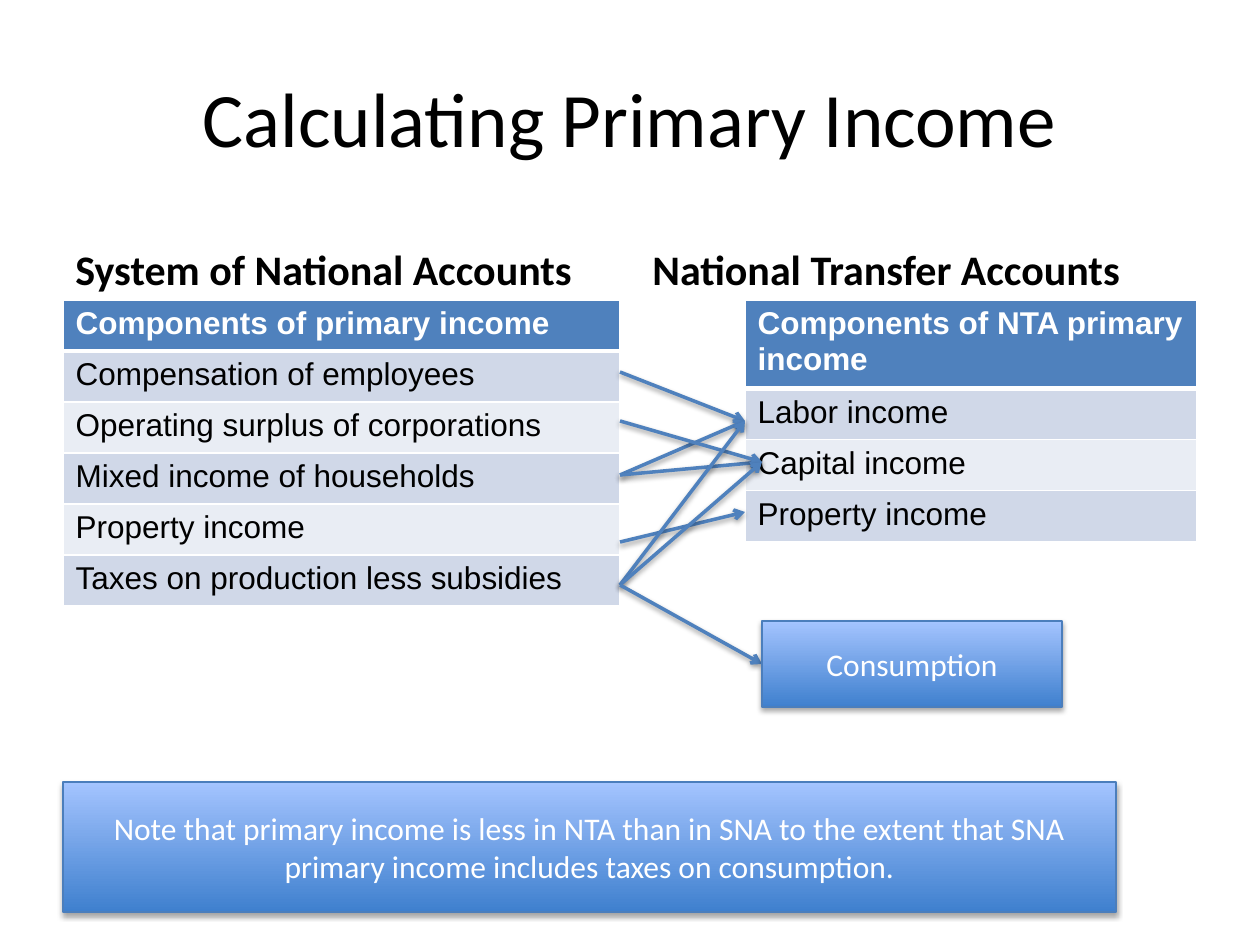
from lxml.etree import SubElement
from pptx import Presentation
from pptx.dml.color import RGBColor
from pptx.enum.shapes import MSO_CONNECTOR as Connector, MSO_SHAPE as Shape
from pptx.enum.text import MSO_ANCHOR as Anchor, PP_ALIGN as Align
from pptx.oxml.ns import qn
from pptx.util import Emu, Pt

EMU_PER_PX = 914400 / 126
BLUE, WHITE, BLACK = "4F81BD", "FFFFFF", "000000"
BANDS = ("D0D8E8", "E9EDF4")
ROW_HEIGHT = 51


def px(length):
    return Emu(round(length * EMU_PER_PX))


def color(hex_string):
    return RGBColor.from_string(hex_string)


def style(paragraph, size, hex_color, font="Calibri", bold=False, align=None):
    paragraph.font.name = font
    paragraph.font.size = Pt(size)
    paragraph.font.bold = bold
    paragraph.font.color.rgb = color(hex_color)
    paragraph.alignment = align


def add_shadow(shape, distance, opacity):
    effects = SubElement(shape._element.spPr, qn("a:effectLst"))
    shadow = SubElement(effects, qn("a:outerShdw"), blurRad="40000", dist=str(distance),
                        dir="5400000", rotWithShape="0")
    shade = SubElement(shadow, qn("a:srgbClr"), val=BLACK)
    SubElement(shade, qn("a:alpha"), val=str(opacity * 1000))


def add_text(slide, box, text, size, anchor, bold=False, align=None):
    frame = slide.shapes.add_textbox(*map(px, box)).text_frame
    frame.word_wrap = True
    frame.vertical_anchor = anchor
    frame.text = text
    style(frame.paragraphs[0], size, BLACK, bold=bold, align=align)


def add_borders(cell, top, bottom):
    properties = cell._tc.get_or_add_tcPr()
    for side, width in (("L", 1), ("R", 1), ("T", top), ("B", bottom)):
        line = SubElement(properties, qn(f"a:ln{side}"), w=str(Pt(width)))
        fill = SubElement(line, qn("a:solidFill"))
        SubElement(fill, qn("a:srgbClr"), val=WHITE)


def add_components(slide, left, top, width, header_height, labels):
    """One-column table: a header, then banded rows."""
    height = header_height + ROW_HEIGHT * (len(labels) - 1)
    table = slide.shapes.add_table(len(labels), 1, *map(px, (left, top, width, height))).table
    for index, label in enumerate(labels):
        header = index == 0
        table.rows[index].height = px(header_height if header else ROW_HEIGHT)
        cell = table.cell(index, 0)
        cell.text = label
        style(cell.text_frame.paragraphs[0], 18, WHITE if header else BLACK, "Arial", header)
        add_borders(cell, 3 if index == 1 else 1, 3 if header else 1)
        cell.fill.solid()
        cell.fill.fore_color.rgb = color(BLUE if header else BANDS[(index - 1) % 2])


def add_arrow(slide, start, end):
    arrow = slide.shapes.add_connector(Connector.STRAIGHT, *map(px, start + end))
    arrow.line.color.rgb = color(BLUE)
    arrow.line.width = Pt(2)
    SubElement(arrow.line._get_or_add_ln(), qn("a:tailEnd"), type="arrow")
    add_shadow(arrow, 20000, 38)


def add_gradient_box(slide, box, text):
    shape = slide.shapes.add_shape(Shape.RECTANGLE, *map(px, box))
    shape.fill.gradient()
    shape.fill.gradient_angle = 90
    for stop, hex_color in zip(shape.fill.gradient_stops, ("3F80CE", "A4C4FF")):
        stop.color.rgb = color(hex_color)
    shape.line.color.rgb = color("4B7EBC")
    shape.line.width = Pt(0.75)
    add_shadow(shape, 23000, 35)
    frame = shape.text_frame
    frame.word_wrap = True
    frame.vertical_anchor = Anchor.MIDDLE
    frame.text = text
    style(frame.paragraphs[0], 18, WHITE, align=Align.CENTER)


def add_flows(slide, left, right):
    """Arrows from the SNA components to where NTA counts them."""
    inset = right + 17
    labor, capital = (right, 421), (inset, 462)
    property_income, consumption = (right, 512), (inset, 664)
    flows = {
        372: [labor],
        475: [labor, capital],
        421: [capital],
        542: [property_income],
        585: [labor, capital, consumption],
    }
    for y, targets in flows.items():
        for target in targets:
            add_arrow(slide, (left, y), target)


def main():
    presentation = Presentation()
    presentation.slide_width, presentation.slide_height = px(1260), px(945)
    slide = presentation.slides.add_slide(presentation.slide_layouts[6])

    # Title and column headings
    add_text(slide, (63, 38, 1134, 157), "Calculating Primary Income", 44,
             Anchor.MIDDLE, align=Align.CENTER)
    for left, heading in ((63, "System of National Accounts"),
                          (640, "National Transfer Accounts")):
        add_text(slide, (left, 212, 557, 88), heading, 24, Anchor.BOTTOM, bold=True)

    # Component tables
    add_components(slide, 63, 300, 557, ROW_HEIGHT, [
        "Components of primary income", "Compensation of employees",
        "Operating surplus of corporations", "Mixed income of households",
        "Property income", "Taxes on production less subsidies"])
    add_components(slide, 745, 300, 452, 82, [
        "Components of NTA primary income", "Labor income",
        "Capital income", "Property income"])

    # Flows, consumption and note
    add_flows(slide, 620, 745)
    add_gradient_box(slide, (762, 621, 300, 86), "Consumption")
    add_gradient_box(slide, (63, 782, 1053, 130),
                     "Note that primary income is less in NTA than in SNA to the extent "
                     "that SNA primary income includes taxes on consumption.")
    presentation.save("out.pptx")


if __name__ == "__main__":
    main()
